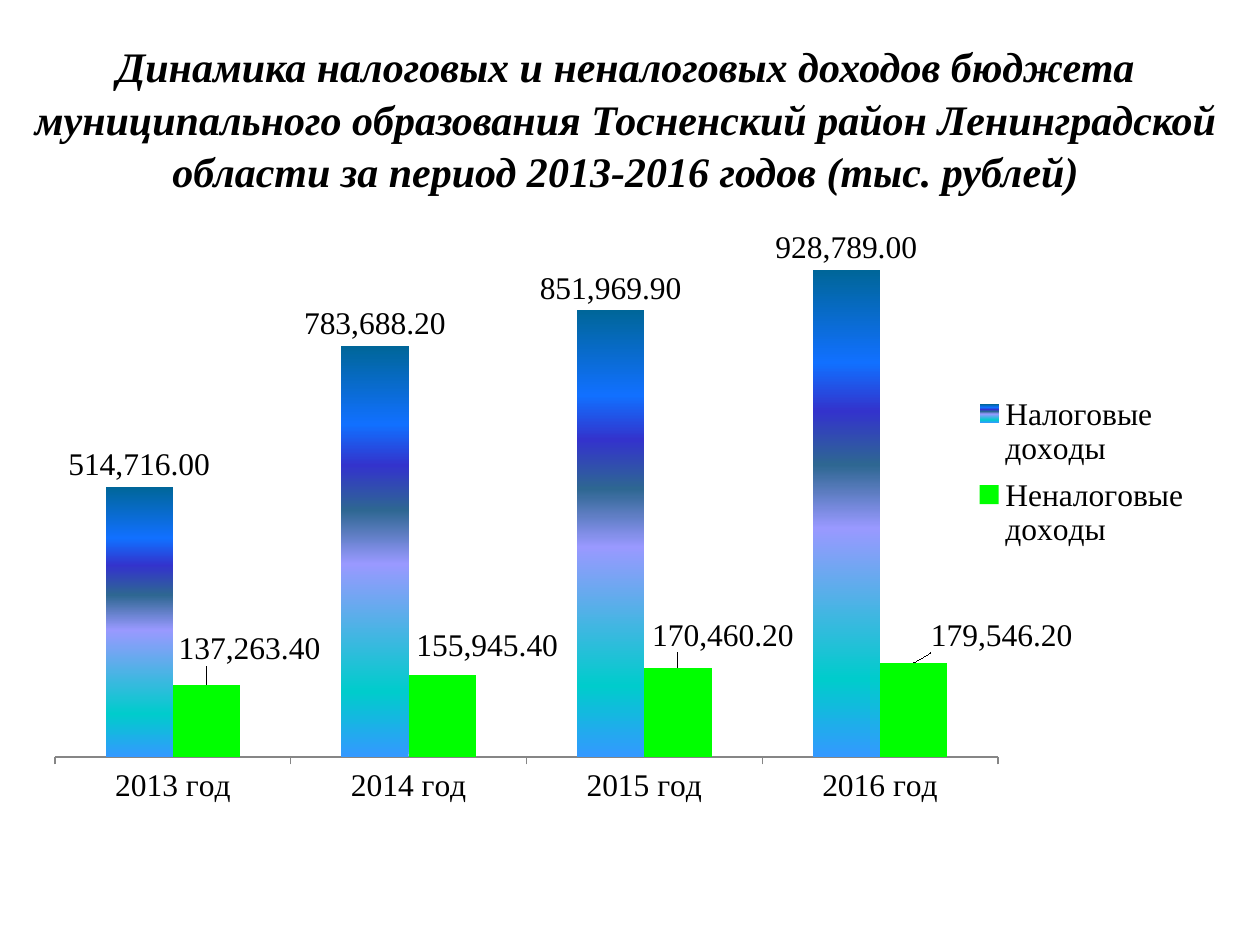
"""Build a slide with a column chart of tax and non-tax budget revenue."""
import pptx
import pptx.chart.data
import pptx.dml.color
import pptx.enum.chart
import pptx.enum.text
import pptx.oxml
import pptx.oxml.ns
import pptx.util

PX = 914400 // 126
FONT = "Times New Roman"
NUMBER_FORMAT = "#,##0.00"
HEADING = ("Динамика налоговых и неналоговых доходов бюджета муниципального "
           "образования Тосненский район Ленинградской области "
           "за период 2013-2016 годов (тыс. рублей)")
HEADING_BOX = (20, 38, 1211, 158)
CHART_BOX = (29, 217, 1172, 626)
YEARS = ["2013 год", "2014 год", "2015 год", "2016 год"]
REVENUE = {
    "Налоговые доходы": (514716, 783688.2, 851969.9, 928789),
    "Неналоговые доходы": (137263.4, 155945.4, 170460.2, 179546.2),
}
TAX_GRADIENT = [(0, "3399FF"), (16, "00CCCC"), (47, "9999FF"), (60, "2E6792"),
                (71, "3333CC"), (81, "1170FF"), (100, "006699")]
NON_TAX_COLOR = "00FF00"
LABEL_SHIFTS = [(43, -14), (45, -7), (45, -10), (88, -5)]
PLOT_AREA = (26, 16, 943, 524)
LEGEND_AREA = (941, 168, 223, 175)


def rgb(color):
    return pptx.dml.color.RGBColor.from_string(color)


def emu(lengths):
    return [length * PX for length in lengths]


def assign(target, values):
    for name, value in values.items():
        setattr(target, name, value)


def style_font(font, size, **extra):
    assign(font, {"name": FONT, "size": pptx.util.Pt(size), **extra})
    font.color.rgb = rgb("000000")


def place(element, index, lengths, modes=()):
    for old in element.findall(pptx.oxml.ns.qn("c:layout")):
        element.remove(old)
    spans = (CHART_BOX[2], CHART_BOX[3]) * 2
    parts = [f'<c:{tag} val="{mode}"/>' for tag, mode in modes]
    parts += [f'<c:{tag} val="{length / span:.4f}"/>'
              for tag, length, span in zip("xywh", lengths, spans)]
    element.insert(index, pptx.oxml.parse_xml(
        f'<c:layout {pptx.oxml.ns.nsdecls("c")}><c:manualLayout>'
        f'{"".join(parts)}</c:manualLayout></c:layout>'))


def fill_gradient(series, stops):
    fill = series.format.fill
    fill.gradient()
    fill.gradient_angle = 90
    stop_list = series._element.find(".//" + pptx.oxml.ns.qn("a:gsLst"))
    for old in list(stop_list):
        stop_list.remove(old)
    for percent, color in stops:
        stop_list.append(pptx.oxml.parse_xml(
            f'<a:gs {pptx.oxml.ns.nsdecls("a")} pos="{percent * 1000}">'
            f'<a:srgbClr val="{color}"/></a:gs>'))


def add_heading(slide):
    heading = slide.shapes.title
    assign(heading, dict(zip(("left", "top", "width", "height"), emu(HEADING_BOX))))
    assign(heading.text_frame, {
        "text": HEADING, "word_wrap": True,
        "auto_size": pptx.enum.text.MSO_AUTO_SIZE.NONE,
        "vertical_anchor": pptx.enum.text.MSO_ANCHOR.MIDDLE})
    paragraph = heading.text_frame.paragraphs[0]
    assign(paragraph, {"alignment": pptx.enum.text.PP_ALIGN.CENTER,
                       "line_spacing": 1.05})
    style_font(paragraph.runs[0].font, 24, bold=True, italic=True)


def add_revenue_chart(slide):
    enums = pptx.enum.chart
    revenue = pptx.chart.data.CategoryChartData(number_format=NUMBER_FORMAT)
    revenue.categories = YEARS
    for name, values in REVENUE.items():
        revenue.add_series(name, values)
    chart = slide.shapes.add_chart(
        enums.XL_CHART_TYPE.COLUMN_CLUSTERED, *emu(CHART_BOX), revenue).chart
    assign(chart, {"has_title": False, "has_legend": True})
    style_font(chart.font, 18)

    assign(chart.value_axis, {"visible": False, "has_major_gridlines": False,
                              "minimum_scale": 0, "maximum_scale": 1000000})
    years = chart.category_axis
    years.major_tick_mark = enums.XL_TICK_MARK.OUTSIDE
    style_font(years.tick_labels.font, 18)
    years.format.line.color.rgb = rgb("868686")
    assign(chart.legend, {"position": enums.XL_LEGEND_POSITION.RIGHT,
                          "include_in_layout": False})
    style_font(chart.legend.font, 18)

    plot = chart.plots[0]
    assign(plot, {"gap_width": 150, "overlap": 0, "vary_by_categories": False})
    for series in plot.series:
        series.invert_if_negative = False
        assign(series.data_labels, {
            "show_value": True, "number_format": NUMBER_FORMAT,
            "number_format_is_linked": False,
            "position": enums.XL_LABEL_POSITION.OUTSIDE_END})
        style_font(series.data_labels.font, 18)
    tax, non_tax = plot.series
    fill_gradient(tax, TAX_GRADIENT)
    non_tax.format.fill.solid()
    non_tax.format.fill.fore_color.rgb = rgb(NON_TAX_COLOR)
    for index, shift in enumerate(LABEL_SHIFTS):
        label = non_tax.points[index].data_label
        label.position = enums.XL_LABEL_POSITION.OUTSIDE_END
        style_font(label.font, 18)
    label_tag = pptx.oxml.ns.qn("c:dLbl")
    for label, shift in zip(non_tax._element.iter(label_tag), LABEL_SHIFTS):
        place(label, 1, shift)

    edges = [("xMode", "edge"), ("yMode", "edge")]
    place(chart._chartSpace.chart.plotArea, 0, PLOT_AREA,
          [("layoutTarget", "inner"), *edges])
    place(chart.legend._element, 1, LEGEND_AREA, edges)


def main():
    deck = pptx.Presentation()
    assign(deck, {"slide_width": pptx.util.Inches(10),
                  "slide_height": pptx.util.Inches(7.5)})
    slide = deck.slides.add_slide(deck.slide_layouts[5])
    add_heading(slide)
    add_revenue_chart(slide)
    deck.save("out.pptx")


if __name__ == "__main__":
    main()
